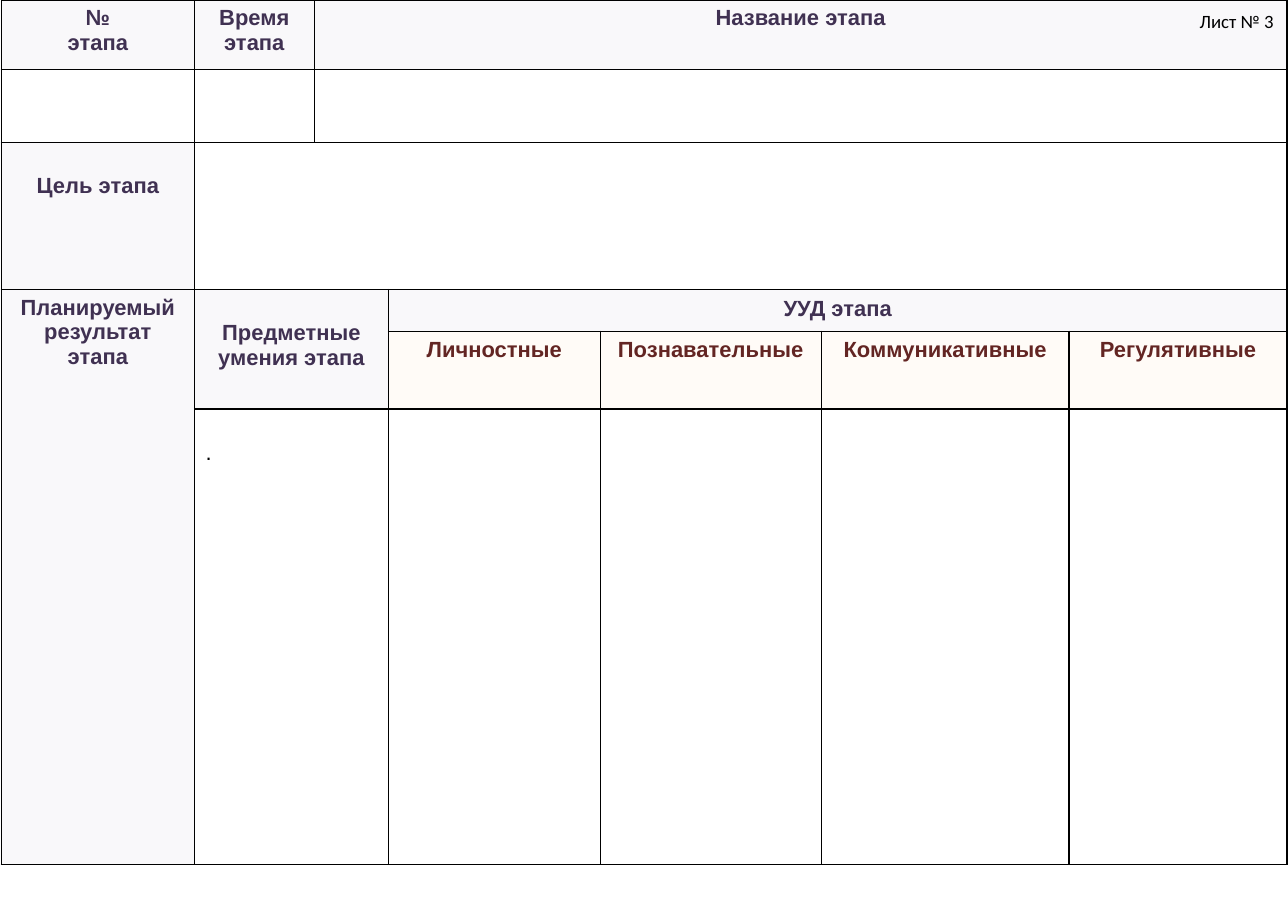
from lxml import etree
from pptx import Presentation
from pptx.dml.color import RGBColor
from pptx.enum.text import PP_ALIGN
from pptx.oxml.ns import qn
from pptx.util import Cm, Pt

CENTER = PP_ALIGN.CENTER
LEFT = PP_ALIGN.LEFT

BLACK = "000000"
WHITE = "FFFFFF"
PURPLE = "403152"
MAROON = "632523"
LILAC = "F9F8FA"
CREAM = "FFFBF7"

COLUMNS = [4.35, 2.7, 1.67, 4.77, 4.98, 5.58, 4.91]
ROWS = [1.56, 1.65, 3.31, 0.94, 1.75, 10.25]
MERGES = [(0, 2, 0, 6), (1, 2, 1, 6), (2, 1, 2, 6), (3, 0, 5, 0),
          (3, 1, 4, 2), (3, 3, 3, 6), (5, 1, 5, 2)]
STAGE_HEADINGS = {
    (0, 0): "№\nэтапа",
    (0, 1): "Время этапа",
    (0, 2): "Название этапа",
    (3, 0): "Планируемый результат\nэтапа",
}
SKILLS = ["Личностные", "Познавательные", "Коммуникативные", "Регулятивные"]
TOP_MARGIN = 0.13
LINE_HEIGHT = 0.57


def rgb(value):
    return RGBColor.from_string(value)


def write(tf, text, size=14, font="Arial", color=PURPLE, bold=True,
          align=CENTER, spacing=None):
    for i, line in enumerate(text.split("\n")):
        p = tf.add_paragraph() if i else tf.paragraphs[0]
        p.alignment = align
        if spacing:
            p.line_spacing = spacing
        r = p.add_run()
        r.text = line
        r.font.size = Pt(size)
        r.font.name = font
        r.font.bold = bold
        r.font.color.rgb = rgb(color)


def set_borders(cell, color=BLACK, width=1):
    tc_pr = cell._tc.get_or_add_tcPr()
    for side in ("lnL", "lnR", "lnT", "lnB"):
        ln = etree.SubElement(tc_pr, qn(f"a:{side}"), w=str(Pt(width)))
        fill = etree.SubElement(ln, qn("a:solidFill"))
        etree.SubElement(fill, qn("a:srgbClr"), val=color)


def fill_cell(cell, color):
    cell.fill.solid()
    cell.fill.fore_color.rgb = rgb(color)


def write_cell(cell, text, fill=LILAC, lines_down=0, **style):
    fill_cell(cell, fill)
    cell.margin_top = Cm(TOP_MARGIN + lines_down * LINE_HEIGHT)
    write(cell.text_frame, text, **style)


def add_grid(s):
    frame = s.shapes.add_table(len(ROWS), len(COLUMNS), Cm(0.03), Cm(0),
                               Cm(sum(COLUMNS)), Cm(sum(ROWS)))
    table = frame.table
    table.first_row = False
    table.horz_banding = False
    for column, width in zip(table.columns, COLUMNS):
        column.width = Cm(width)
    for row, height in zip(table.rows, ROWS):
        row.height = Cm(height)
    for cell in table.iter_cells():
        set_borders(cell)
        fill_cell(cell, WHITE)
    for top, left, bottom, right in MERGES:
        table.cell(top, left).merge(table.cell(bottom, right))
    return table


def fill_stage_plan(table):
    for (row, column), text in STAGE_HEADINGS.items():
        write_cell(table.cell(row, column), text)
    write_cell(table.cell(2, 0), "Цель этапа", lines_down=1)
    write_cell(table.cell(3, 1), "Предметные умения этапа", lines_down=1)
    write_cell(table.cell(3, 3), "УУД этапа", spacing=1.07)
    for column, skill in enumerate(SKILLS, start=3):
        write_cell(table.cell(4, column), skill, fill=CREAM, color=MAROON)
    write_cell(table.cell(5, 1), ".", fill=WHITE, lines_down=1,
               color=BLACK, bold=False, align=LEFT)


def add_label(s, text, left, top, width, height, **style):
    tf = s.shapes.add_textbox(Cm(left), Cm(top), Cm(width), Cm(height)).text_frame
    tf.word_wrap = False
    write(tf, text, **style)


def main():
    prs = Presentation()
    prs.slide_width = Cm(29.01)
    prs.slide_height = Cm(20.4)
    s = prs.slides.add_slide(prs.slide_layouts[6])
    fill_stage_plan(add_grid(s))
    add_label(s, "Лист № 3", 26.77, 0.1, 2.21, 0.76, size=12,
              font="Calibri", color=BLACK, bold=False, align=LEFT)
    prs.save("out.pptx")


if __name__ == "__main__":
    main()
